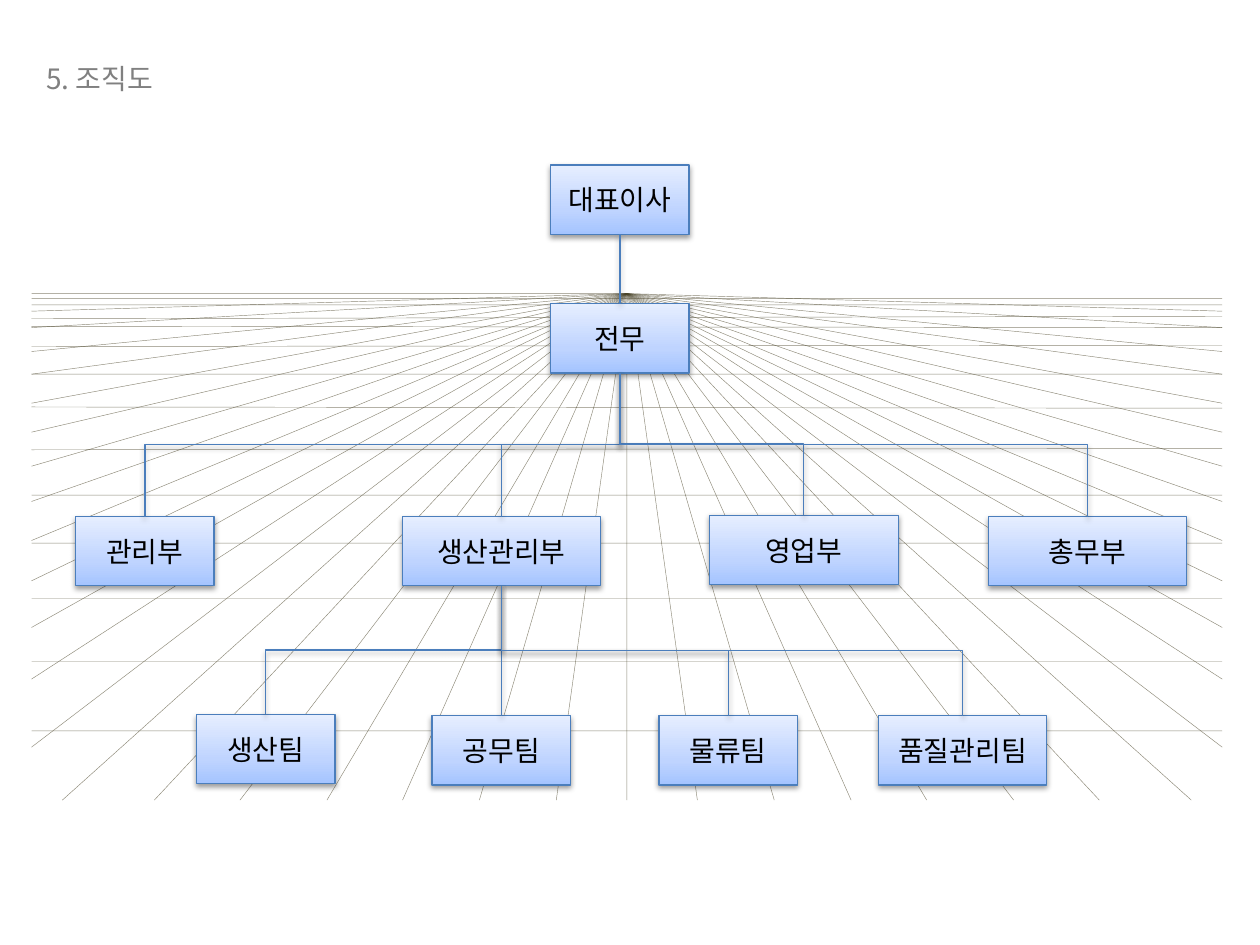
from copy import deepcopy
from dataclasses import dataclass

from lxml import etree
from pptx import Presentation
from pptx.dml.color import RGBColor
from pptx.enum.shapes import MSO_CONNECTOR, MSO_SHAPE
from pptx.enum.text import MSO_ANCHOR, MSO_AUTO_SIZE, PP_ALIGN
from pptx.oxml.ns import qn
from pptx.util import Inches, Pt

STRAIGHT, ELBOW = MSO_CONNECTOR.STRAIGHT, MSO_CONNECTOR.ELBOW
RECTANGLE = MSO_SHAPE.RECTANGLE
CENTER, MIDDLE = PP_ALIGN.CENTER, MSO_ANCHOR.MIDDLE
FIT_TEXT = MSO_AUTO_SIZE.SHAPE_TO_FIT_TEXT
TOP_SIDE, BOTTOM_SIDE = 0, 2

# The slide is a grid of 100 columns by 75 rows
COLUMNS, ROWS = 100, 75
CELL = Inches(0.1)


@dataclass(frozen=True)
class Theme:
    font: str = "Noto Sans CJK KR"
    size: int = 16
    title: str = "808080"
    text: str = "000000"
    border: str = "4B7EBC"
    floor: str = "4A452A"
    gradient: tuple = ((0, "A4C4FF"), (0.35, "BFD4FF"), (1, "E6EEFF"))
    border_width: float = 0.75
    floor_width: float = 0.25
    floor_opacity: int = 64
    shadow_opacity: int = 38


THEME = Theme()

# Perspective floor: rays from one vanishing point, crossed by level lines
VANISH_X, VANISH_Y = 49.75, 23.3
FLOOR_LEFT, FLOOR_RIGHT, FLOOR_BOTTOM = 2.5, 97, 63.5
SIDE_ROWS = (24.7, 26, 27.9, 29.7, 32, 34.3, 37, 39.8, 42.9, 46.1, 49.8, 53.9, 59.3)
BOTTOM_OFFSETS = (5.6, 11.7, 17.8, 23.8, 30.7, 37.5, 44.8)
# Row at the left edge, row at the right edge
LEVEL_ROWS = ((58, 58), (52.5, 52.5), (47.5, 47.5), (43.1, 43.1), (39.3, 39.3),
              (35.7, 35.6), (32.3, 32.4), (29.7, 29.7), (27.5, 27.4),
              (25.9, 26), (25.3, 25.1), (24.2, 24.2), (23.7, 23.7))

# Organisation: name, centre column, top row, width, parent
BOX_HEIGHT = 5.5
UNITS = (
    ("대표이사", 49.2, 13.1, 11, None),
    ("전무", 49.2, 24.1, 11, "대표이사"),
    ("관리부", 11.5, 41, 11, "전무"),
    ("생산관리부", 39.8, 41, 15.7, "전무"),
    ("영업부", 63.8, 40.9, 15, "전무"),
    ("총무부", 86.3, 41, 15.7, "전무"),
    ("생산팀", 21.1, 56.7, 11, "생산관리부"),
    ("공무팀", 39.8, 56.8, 11, "생산관리부"),
    ("물류팀", 57.8, 56.8, 11, "생산관리부"),
    ("품질관리팀", 76.4, 56.8, 13.3, "생산관리부"),
)


def cells(*values):
    return [round(value * CELL) for value in values]


def style_line(line, color, width):
    line.color.rgb = RGBColor.from_string(color)
    line.width = Pt(width)


def add_effects(shape, shadow):
    effects = etree.SubElement(shape._element.spPr, qn("a:effectLst"))
    if shadow:
        outer = etree.SubElement(effects, qn("a:outerShdw"), blurRad="40000",
                                 dist="20000", dir="5400000", rotWithShape="0")
        color = etree.SubElement(outer, qn("a:srgbClr"), val=THEME.text)
        etree.SubElement(color, qn("a:alpha"), val=str(THEME.shadow_opacity * 1000))


def add_span(para, text, color):
    span = para.add_run()
    span.text = text
    span.font.name = THEME.font
    span.font.size = Pt(THEME.size)
    span.font.color.rgb = RGBColor.from_string(color)
    etree.SubElement(span.font._element, qn("a:ea"), typeface=THEME.font)


def add_title(page, text):
    box = page.shapes.add_textbox(*cells(2.7, 4.4, 38.3, 3.7))
    box.text_frame.word_wrap = True
    box.text_frame.auto_size = FIT_TEXT
    add_span(box.text_frame.paragraphs[0], text, THEME.title)


def add_floor_line(group, x1, y1, x2, y2):
    line = group.shapes.add_connector(STRAIGHT, *cells(x1, y1, x2, y2))
    style_line(line.line, THEME.floor, THEME.floor_width)
    color = line._element.spPr.find(".//" + qn("a:srgbClr"))
    etree.SubElement(color, qn("a:alpha"), val=str(THEME.floor_opacity * 1000))
    add_effects(line, shadow=False)


def add_floor(page):
    group = page.shapes.add_group_shape()
    ends = [(VANISH_X, FLOOR_BOTTOM), (FLOOR_LEFT, VANISH_Y)]
    ends += [(x, y) for x in (FLOOR_LEFT, FLOOR_RIGHT) for y in SIDE_ROWS]
    ends += [(VANISH_X + side * offset, FLOOR_BOTTOM)
             for side in (-1, 1) for offset in BOTTOM_OFFSETS]
    for x, y in ends:
        add_floor_line(group, VANISH_X, VANISH_Y, x, y)
    for left_row, right_row in LEVEL_ROWS:
        add_floor_line(group, FLOOR_LEFT, left_row, FLOOR_RIGHT, right_row)


def fill_gradient(shape):
    shape.fill.gradient()
    shape.fill.gradient_angle = 90
    stop_list = shape._element.spPr.find(".//" + qn("a:gsLst"))
    stop_list.append(deepcopy(stop_list[0]))
    for stop, (position, color) in zip(shape.fill.gradient_stops, THEME.gradient):
        stop.position = position
        stop.color.rgb = RGBColor.from_string(color)


def add_unit(page, name, center, top, width):
    box = page.shapes.add_shape(
        RECTANGLE, *cells(center - width / 2, top, width, BOX_HEIGHT))
    fill_gradient(box)
    style_line(box.line, THEME.border, THEME.border_width)
    add_effects(box, shadow=True)
    box.text_frame.vertical_anchor = MIDDLE
    para = box.text_frame.paragraphs[0]
    para.alignment = CENTER
    add_span(para, name, THEME.text)
    return box


def turn_elbow(link):
    """Turn the elbow so that it leaves downwards and enters from above."""
    x1, y1, x2, y2 = link.begin_x, link.begin_y, link.end_x, link.end_y
    drop, reach = y2 - y1, abs(x2 - x1)
    frame = link._element.spPr.find(qn("a:xfrm"))
    frame.attrib.clear()
    if x2 < x1:
        frame.set("rot", "5400000")
    else:
        frame.set("rot", "16200000")
        frame.set("flipH", "1")
    link.left, link.top = (x1 + x2 - drop) // 2, (y1 + y2 - reach) // 2
    link.width, link.height = drop, reach


def add_link(page, parent, child, straight):
    link = page.shapes.add_connector(STRAIGHT if straight else ELBOW, 0, 0, 0, 0)
    link.begin_connect(parent, BOTTOM_SIDE)
    link.end_connect(child, TOP_SIDE)
    if not straight:
        turn_elbow(link)
    style_line(link.line, THEME.border, THEME.border_width)
    add_effects(link, shadow=True)


def add_organisation(page):
    boxes = {name: add_unit(page, name, center, top, width)
             for name, center, top, width, _ in UNITS}
    centers = {unit[0]: unit[1] for unit in UNITS}
    for name, center, _, _, parent in UNITS:
        if parent:
            add_link(page, boxes[parent], boxes[name], center == centers[parent])


def main():
    deck = Presentation()
    deck.slide_width, deck.slide_height = cells(COLUMNS, ROWS)
    page = deck.slides.add_slide(deck.slide_layouts[6])
    add_floor(page)
    add_title(page, "5. 조직도")
    add_organisation(page)
    deck.save("out.pptx")


if __name__ == "__main__":
    main()
